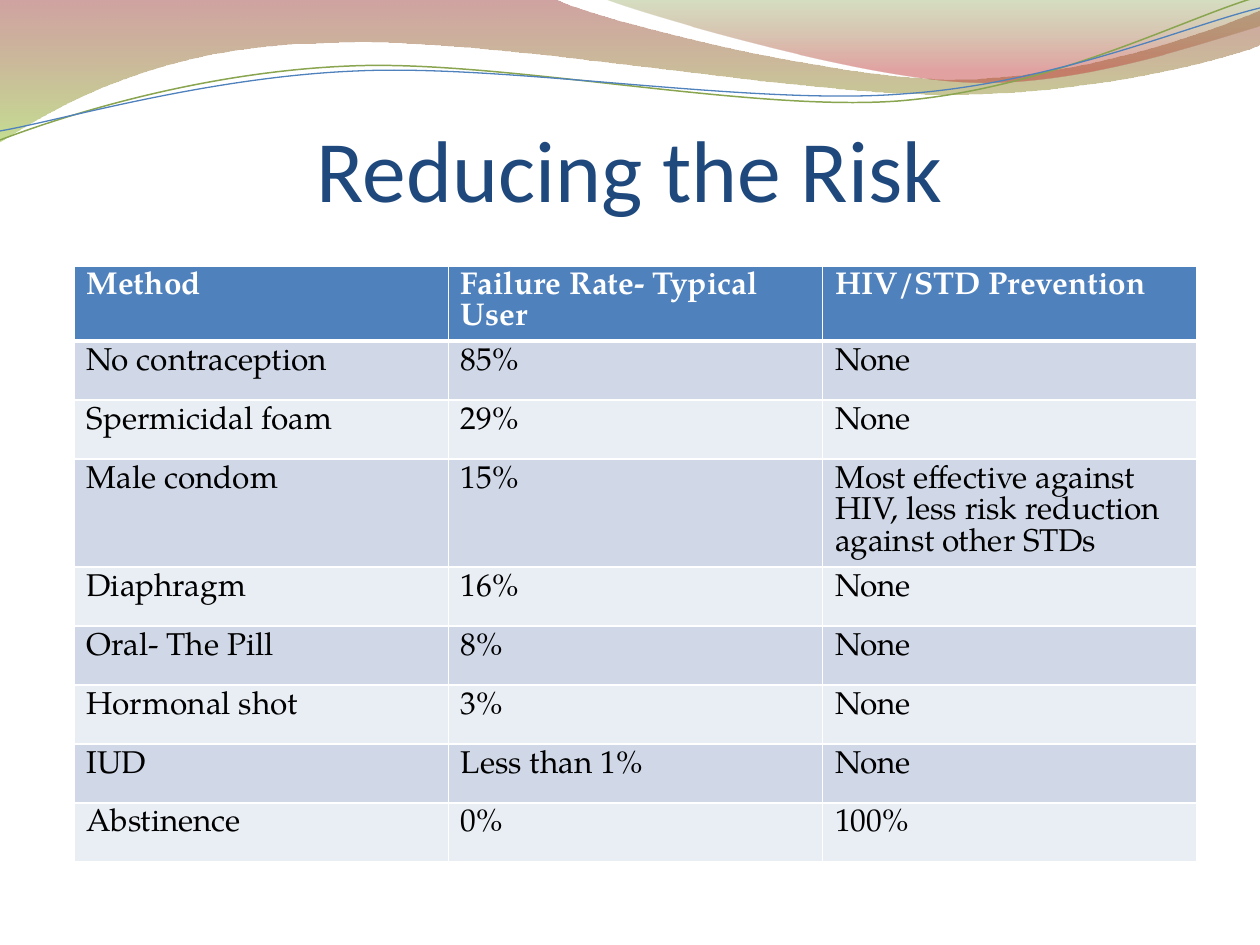
import pptx
import pptx.util
import pptx.dml.color
import pptx.enum.text
import pptx.oxml
import pptx.oxml.ns
import lxml.etree

SCALE = 914400 / 126
BODY = "TeX Gyre Pagella"
WHITE = "FFFFFF"
BANDS = ["D0D8E8", "E9EDF4"]
HEADS = ["Method", "Failure Rate- Typical User", "HIV/STD Prevention"]
ROWS = [
    ("No contraception", "85%", "None"),
    ("Spermicidal foam", "29%", "None"),
    ("Male condom", "15%",
     "Most effective against HIV, less risk reduction against other STDs"),
    ("Diaphragm", "16%", "None"),
    ("Oral- The Pill", "8%", "None"),
    ("Hormonal shot", "3%", "None"),
    ("IUD", "Less than 1%", "None"),
    ("Abstinence", "0%", "100%"),
]
HEIGHTS = [75, 59, 59, 108, 59, 59, 59, 59, 59]

# Each outline is a list of points (2 numbers) and Bezier curves (6 numbers).
BAND = [(0, 0), (554, -1), (600, 21, 837, 79, 955, 79),
        (1075, 79, 1207, 33, 1260, 11), (1261, 45),
        (1238, 55, 1096, 96, 940, 94), (784, 94, 481, 35, 324, 43),
        (163, 45, 58, 105, -1, 142)]
CREST = [(604, -1), (641, 14, 859, 78, 969, 82),
         (1079, 87, 1211, 40, 1260, 26), (1260, 0)]
GREEN = [(0, 140), (60, 117, 199, 72, 349, 66),
         (498, 59, 747, 112, 898, 101), (1050, 89, 1182, 19, 1257, -3)]
BLUE = [(0, 131), (59, 121, 207, 77, 357, 71),
        (508, 64, 752, 106, 903, 94), (1053, 84, 1186, 26, 1260, 8)]


def px(n):
    return pptx.util.Emu(round(n * SCALE))


def color(code):
    return pptx.dml.color.RGBColor.from_string(code)


def bend(shape, parts):
    """Merge the three straight segments of each curve into one Bezier."""
    lines = list(shape.element.iter(pptx.oxml.ns.qn("a:lnTo")))
    for part in parts[1:]:
        group = [lines.pop(0) for _ in range(len(part) // 2)]
        if len(group) == 3:
            curve = lxml.etree.Element(pptx.oxml.ns.qn("a:cubicBezTo"))
            group[0].addprevious(curve)
            for line in group:
                curve.append(line[0])
                line.getparent().remove(line)


class Deck:
    def __init__(self):
        self.show = pptx.Presentation()
        self.show.slide_width, self.show.slide_height = px(1260), px(945)
        self.slide = self.show.slides.add_slide(self.show.slide_layouts[5])

    def style(self, para, size, face, code, bold=False):
        for run in para.runs:
            font = run.font
            font.size, font.name, font.bold = pptx.util.Pt(size), face, bold
            font.color.rgb = color(code)

    def outline(self, parts, close):
        dots = [(px(part[i]), px(part[i + 1]))
                for part in parts for i in range(0, len(part), 2)]
        pen = self.slide.shapes.build_freeform(*dots[0], scale=1)
        pen.add_line_segments(dots[1:], close=close)
        shape = pen.convert_to_shape()
        bend(shape, parts)
        shape.shadow.inherit = False
        return shape

    def wave(self, parts, stops):
        """Draw a closed area; stops are (position, colour, opacity %)."""
        shape = self.outline(parts, True)
        shape.line.fill.background()
        shape.fill.gradient()
        shape.fill.gradient_angle = 270
        for stop, (place, code, alpha) in zip(shape.fill.gradient_stops, stops):
            stop.position = place
            stop.color.rgb = color(code)
        tag = pptx.oxml.ns.qn("a:srgbClr")
        for node, stop in zip(shape.element.spPr.iter(tag), stops):
            lxml.etree.SubElement(node, pptx.oxml.ns.qn("a:alpha"),
                                  val=str(stop[2] * 1000))

    def curve(self, parts, code, width):
        shape = self.outline(parts, False)
        shape.fill.background()
        shape.line.color.rgb = color(code)
        shape.line.width = pptx.util.Pt(width)

    def title(self, text, x, y, w, h):
        box = self.slide.shapes.title
        box.element.getparent().append(box.element)
        box.left, box.top, box.width, box.height = map(px, (x, y, w, h))
        frame = box.text_frame
        frame.text = text
        frame.word_wrap = True
        frame.auto_size = pptx.enum.text.MSO_AUTO_SIZE.NONE
        frame.vertical_anchor = pptx.enum.text.MSO_ANCHOR.BOTTOM
        frame.margin_left = frame.margin_right = frame.margin_bottom = 0
        para = frame.paragraphs[0]
        para.alignment = pptx.enum.text.PP_ALIGN.CENTER
        self.style(para, 50, "Calibri", "1F497D")

    def border(self, cell, top, low):
        props = cell._tc.get_or_add_tcPr()
        sides = {"L": 1, "R": 1, "T": top, "B": low}
        for i, (side, width) in enumerate(sides.items()):
            props.insert(i, pptx.oxml.parse_xml(
                f'<a:ln{side} {pptx.oxml.ns.nsdecls("a")} w="{width * 12700}">'
                f'<a:solidFill><a:srgbClr val="{WHITE}"/></a:solidFill>'
                f'</a:ln{side}>'))

    def cell(self, cell, text, row):
        head = row == 0
        self.border(cell, 3 if row == 1 else 1, 3 if head else 1)
        cell.fill.solid()
        cell.fill.fore_color.rgb = color(
            "4F81BD" if head else BANDS[(row - 1) % 2])
        cell.text_frame.text = text
        para = cell.text_frame.paragraphs[0]
        self.style(para, 18, BODY, WHITE if head else "000000", head)

    def table(self, rows, heights, x, y, w):
        count = len(rows[0])
        grid = self.slide.shapes.add_table(
            len(rows), count, px(x), px(y), px(w), px(sum(heights))).table
        for col in grid.columns:
            col.width = px(w / count)
        for r, (texts, height) in enumerate(zip(rows, heights)):
            grid.rows[r].height = px(height)
            for c, text in enumerate(texts):
                self.cell(grid.cell(r, c), text, r)


def main():
    deck = Deck()
    deck.wave(BAND, [(0, "973330", 45), (1, "95C238", 55)])
    deck.wave(CREST, [(0, "769537", 30), (0.8, "BE3330", 45)])
    deck.curve(GREEN, "89A54F", 0.85)
    deck.curve(BLUE, "4F81BD", 0.75)
    deck.title("Reducing the Risk", 63, 63, 1134, 157)
    deck.table([HEADS] + ROWS, HEIGHTS, 74, 266, 1123)
    deck.show.save("out.pptx")


if __name__ == "__main__":
    main()
